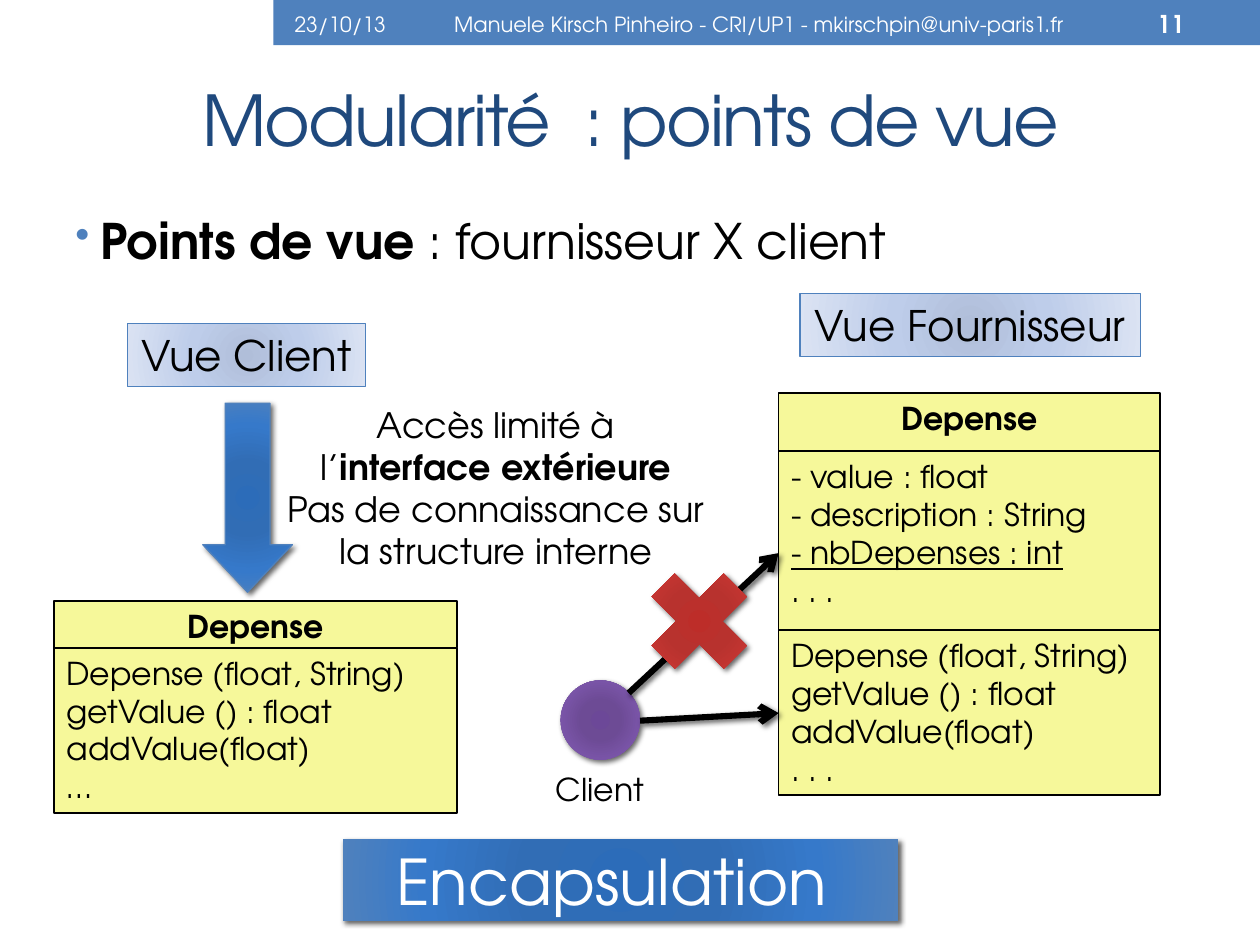
from dataclasses import dataclass
from typing import NamedTuple, Optional

from pptx import Presentation, oxml
from pptx.dml.color import RGBColor
from pptx.enum import shapes, text
from pptx.util import Pt

PX = 9144  # EMU in one px, 100 px to the inch
FONT = "TeX Gyre Adventor"
NS = 'xmlns:a="http://schemas.openxmlformats.org/drawingml/2006/main"'

BLUE = RGBColor(0x4F, 0x81, 0xBD)
NAVY = RGBColor(0x1F, 0x49, 0x7D)
YELLOW = RGBColor(0xF6, 0xF8, 0x9A)
BLACK = RGBColor(0, 0, 0)
WHITE = RGBColor(255, 255, 255)

PALE = ((0, "B0BED9"), (45, "BECDEA"), (100, "DBE3F3"))
DEEP = ((0, "2C6CB9"), (34, "316DB5"), (70, "3679CA"), (100, "4F81BD"))
VIOLET = ((0, "6C4898"), (34, "6D4B95"), (70, "7954A7"), (100, "8064A2"))
RED = ((0, "BD2D29"), (34, "B8322E"), (70, "CD3834"), (100, "C0504D"))

KIND = shapes.MSO_SHAPE
LEFT, MID, RIGHT = text.PP_ALIGN.LEFT, text.PP_ALIGN.CENTER, text.PP_ALIGN.RIGHT
TOP, CENTER = text.MSO_ANCHOR.TOP, text.MSO_ANCHOR.MIDDLE
PAD = (10, 5, 10, 5)
SLIM = (4, 0, 4, 0)


class Run(NamedTuple):
    words: str
    bold: bool = False
    underline: bool = False


@dataclass
class Words:
    paras: list
    size: int = 18
    color: RGBColor = BLACK
    align: int = LEFT
    anchor: int = TOP
    pad: tuple = PAD
    wrap: bool = True


@dataclass
class Box:
    at: tuple
    fill: object = YELLOW
    line: Optional[RGBColor] = None
    width: float = 0.75
    kind: int = KIND.RECTANGLE
    shadow: bool = False
    adjust: tuple = ()
    words: Optional[Words] = None


def scale(lengths):
    return [n * PX for n in lengths]


def blend(shape, stops):
    """Fill a shape with a round gradient."""
    marks = "".join(f'<a:gs pos="{pos * 1000}"><a:srgbClr val="{tint}"/></a:gs>'
                    for pos, tint in stops)
    shape.element.spPr.prstGeom.addnext(oxml.parse_xml(
        f'<a:gradFill {NS} rotWithShape="1"><a:gsLst>{marks}</a:gsLst>'
        '<a:path path="circle"><a:fillToRect l="100000" t="100000" '
        'r="100000" b="100000"/></a:path></a:gradFill>'))


def shade(shape, on: bool):
    """Give a shape the soft shadow, or none at all."""
    drop = ('<a:outerShdw blurRad="38100" dist="25400" dir="2700000" rotWithShape="0">'
            '<a:srgbClr val="000000"><a:alpha val="60000"/></a:srgbClr></a:outerShdw>')
    shape.element.spPr.append(oxml.parse_xml(
        f'<a:effectLst {NS}>{drop if on else ""}</a:effectLst>'))


def write(shape, words: Words):
    frame = shape.text_frame
    left, top, right, bottom = scale(words.pad)
    look = dict(margin_left=left, margin_top=top, margin_right=right, margin_bottom=bottom,
                word_wrap=words.wrap, vertical_anchor=words.anchor)
    for name, value in look.items():
        setattr(frame, name, value)
    for i, runs in enumerate(words.paras):
        para = frame.add_paragraph() if i else frame.paragraphs[0]
        para.alignment = words.align
        for part in [Run(runs)] if isinstance(runs, str) else runs:
            run = para.add_run()
            run.text = part.words
            style = dict(name=FONT, size=Pt(words.size), bold=part.bold,
                         underline=part.underline)
            for name, value in style.items():
                setattr(run.font, name, value)
            run.font.color.rgb = words.color
    return frame.paragraphs[0]


def label(slide, at: tuple, words: Words):
    return write(slide.shapes.add_textbox(*scale(at)), words)


def draw(slide, box: Box):
    shape = slide.shapes.add_shape(box.kind, *scale(box.at))
    for i, value in enumerate(box.adjust):
        shape.adjustments[i] = value
    if isinstance(box.fill, RGBColor):
        shape.fill.solid()
        shape.fill.fore_color.rgb = box.fill
    else:
        blend(shape, box.fill)
    if box.line is None:
        shape.line.fill.background()
    else:
        shape.line.color.rgb = box.line
        shape.line.width = Pt(box.width)
    shade(shape, box.shadow)
    if box.words:
        write(shape, box.words)


def arrow(slide, ends: tuple):
    line = slide.shapes.add_connector(shapes.MSO_CONNECTOR.STRAIGHT, *scale(ends))
    line.line.color.rgb = BLACK
    line.line.width = Pt(3.5)
    line.line._get_or_add_ln().append(oxml.parse_xml(f'<a:tailEnd {NS} type="arrow"/>'))
    shade(line, True)


def table(slide, left: int, width: int, parts: list):
    """Draw a class diagram from (top, height, paragraphs) parts, name first."""
    for i, (top, height, paras) in enumerate(parts):
        words = Words(paras, align=LEFT if i else MID)
        draw(slide, Box((left, top, width, height), line=BLACK, width=1, words=words))


def header(slide):
    draw(slide, Box((217, 0, 783, 36), BLUE))
    for left, width, words, size, align in (
            (224, 110, "23/10/13", 12, LEFT),
            (319, 567, "Manuele Kirsch Pinheiro - CRI/UP1 - mkirschpin@univ-paris1.fr", 12, MID),
            (894, 56, [Run("11", True)], 14, RIGHT)):
        label(slide, (left, 2, width, 34), Words([words], size, WHITE, align, CENTER))


def heading(slide):
    title = label(slide, (51, 44, 899, 100),
                  Words(["Modularité  : points de vue"], 40, NAVY, MID, CENTER))
    title.runs[0].font._element.set("spc", "-100")
    point = label(slide, (50, 162, 900, 60), Words(
        [[Run("Points de vue", True), Run(" : fournisseur X client")]], 28))
    props = point._p.get_or_add_pPr()
    props.set("marL", str(20 * PX))
    props.set("indent", str(-20 * PX))
    for mark in (f'<a:buClr {NS}><a:srgbClr val="{BLUE}"/></a:buClr>',
                 f'<a:buSzPct {NS} val="85000"/>',
                 f'<a:buChar {NS} char="•"/>'):
        props.append(oxml.parse_xml(mark))


def main():
    deck = Presentation()
    deck.slide_width, deck.slide_height = scale((1000, 750))
    slide = deck.slides.add_slide(deck.slide_layouts[6])
    header(slide)
    heading(slide)

    name = [[Run("Depense", True)]]
    calls = ["Depense (float, String)", "getValue () : float", "addValue(float)"]
    fields = ["- value : float", "- description : String",
              [Run("- nbDepenses : int", underline=True)], ". . ."]
    table(slide, 43, 320, [(477, 40, name), (514, 131, calls + ["…"])])
    table(slide, 618, 303, [(312, 86, name), (358, 162, fields),
                            (500, 131, calls + [". . ."])])

    for at, view in (((101, 257, 189, 50), "Vue Client"),
                     ((635, 233, 270, 50), "Vue Fournisseur")):
        draw(slide, Box(at, PALE, BLUE, words=Words([view], 24, align=MID, wrap=False)))
    draw(slide, Box((161, 320, 71, 150), DEEP, BLUE, kind=KIND.DOWN_ARROW,
                    shadow=True, adjust=(0.5, 0.53)))
    label(slide, (224, 320, 339, 135), Words(
        [[Run("Accès limité à l’"), Run("interface extérieure", True)],
         "Pas de connaissance sur la structure interne"], 20, align=MID, pad=SLIM))

    draw(slide, Box((445, 540, 63, 63), VIOLET, kind=KIND.OVAL, shadow=True))
    label(slide, (437, 611, 79, 30), Words(["Client"], pad=SLIM, wrap=False))
    for ends in ((508, 572, 618, 566), (499, 550, 618, 439)):
        arrow(slide, ends)
    draw(slide, Box((500, 438, 110, 110), RED, kind=KIND.MATH_MULTIPLY, shadow=True))
    draw(slide, Box((272, 666, 441, 65), DEEP, shadow=True, words=Words(
        ["Encapsulation"], 36, WHITE, MID, CENTER, (4, 0, 18, 0))))
    deck.save("out.pptx")


if __name__ == "__main__":
    main()
